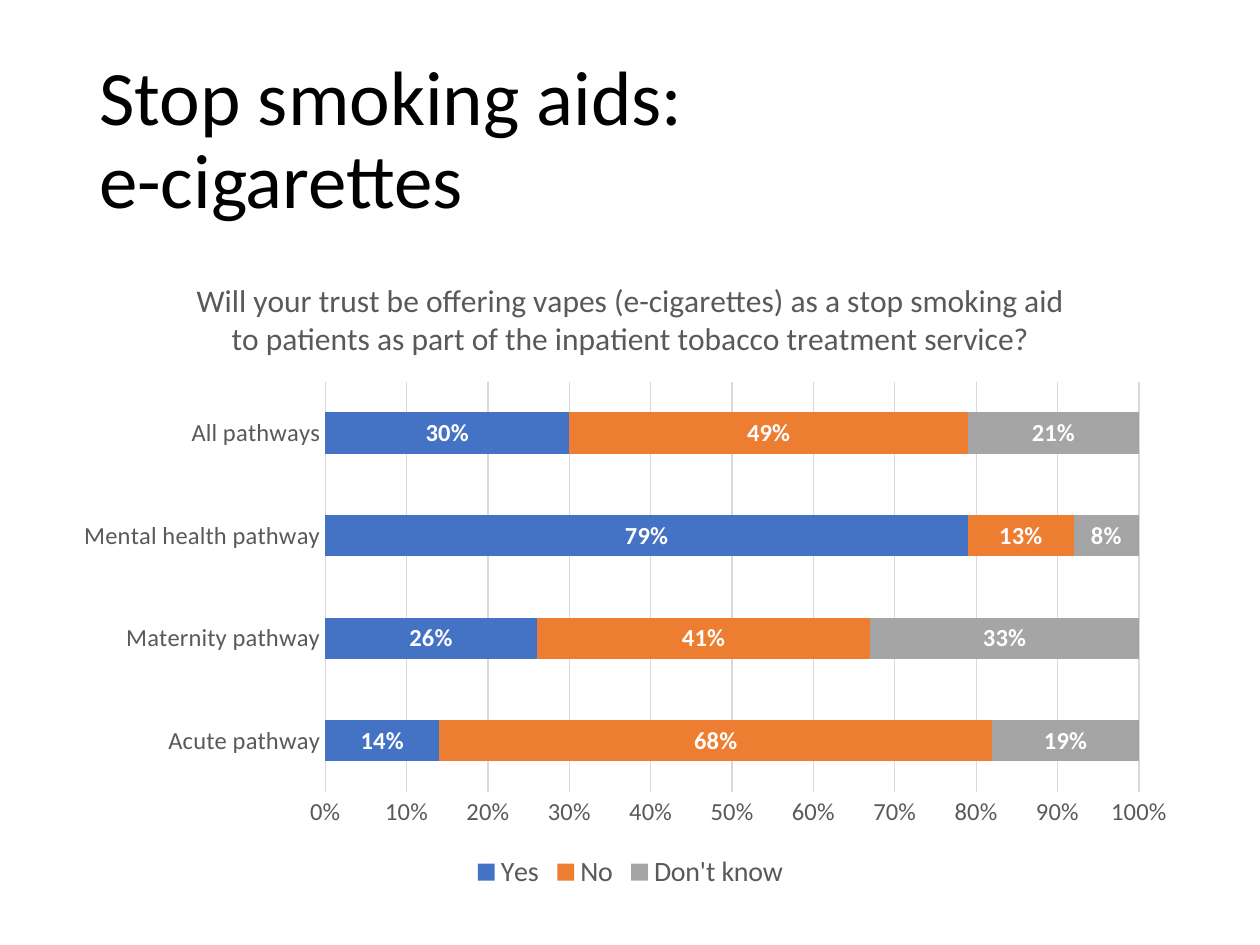
from lxml import etree
from pptx import Presentation
from pptx import util as u
from pptx.chart.data import CategoryChartData
from pptx.dml.color import RGBColor
from pptx.enum import chart as ch, text
from pptx.oxml import ns


def rgb(code):
    return RGBColor.from_string(code)


class Deck:
    face = "Calibri"
    ink, grey, rule, white = "000000", "595959", "D9D9D9", "FFFFFF"

    def __init__(self, wide, high):
        self.prs = Presentation()
        self.prs.slide_width, self.prs.slide_height = u.Cm(wide), u.Cm(high)
        self.slide = self.prs.slides.add_slide(self.prs.slide_layouts[6])

    def style(self, font, size, color, bold=False):
        font.name, font.size, font.bold = self.face, u.Pt(size), bold
        font.color.rgb = rgb(color)

    def title(self, words, box, size):
        frame = self.slide.shapes.add_textbox(*map(u.Cm, box)).text_frame
        frame.word_wrap = True
        frame.vertical_anchor = text.MSO_ANCHOR.MIDDLE
        frame.text = words
        para = frame.paragraphs[0]
        para.line_spacing = 0.9
        self.style(para.runs[0].font, size, self.ink)

    def line(self, form):
        form.line.color.rgb, form.line.width = rgb(self.rule), u.Pt(0.75)

    def axis(self, axis):
        axis.major_tick_mark = axis.minor_tick_mark = ch.XL_TICK_MARK.NONE
        self.style(axis.tick_labels.font, 14, self.grey)

    def place(self, chart, area):
        # Inner plot area as fractions of the chart
        plot = chart.plots[0]._element.getparent()
        for old in plot.findall(ns.qn("c:layout")):
            plot.remove(old)
        layout = etree.Element(ns.qn("c:layout"))
        hand = etree.SubElement(layout, ns.qn("c:manualLayout"))
        marks = [("layoutTarget", "inner"), ("xMode", "edge"), ("yMode", "edge")]
        for tag, val in marks + list(zip("xywh", area)):
            etree.SubElement(hand, ns.qn("c:" + tag)).set("val", str(val))
        plot.insert(0, layout)

    def bars(self, ask, cats, rows, box, area):
        data = CategoryChartData(number_format="0%")
        data.categories = cats
        for name, _, vals in rows:
            data.add_series(name, vals)
        chart = self.slide.shapes.add_chart(
            ch.XL_CHART_TYPE.BAR_STACKED, *map(u.Cm, box), data).chart
        self.style(chart.font, 10, self.ink)

        # Question above the bars
        chart.has_title = True
        chart.chart_title.include_in_layout = False
        head = chart.chart_title.text_frame
        head.text = ask
        self.style(head.paragraphs[0].runs[0].font, 18, self.grey)

        # Axes
        cat, val = chart.category_axis, chart.value_axis
        self.axis(cat)
        self.line(cat.format)
        self.axis(val)
        val.format.line.fill.background()
        val.minimum_scale, val.maximum_scale, val.major_unit = 0, 1, 0.1
        val.tick_labels.number_format = "0%"
        val.tick_labels.number_format_is_linked = False
        val.has_major_gridlines = True
        self.line(val.major_gridlines.format)

        # Bars and their labels
        plot = chart.plots[0]
        plot.gap_width, plot.overlap, plot.vary_by_categories = 150, 100, False
        for bar, (_, color, _) in zip(plot.series, rows):
            bar.format.fill.solid()
            bar.format.fill.fore_color.rgb = rgb(color)
            tags = bar.data_labels
            tags.show_value = True
            tags.position = ch.XL_LABEL_POSITION.CENTER
            tags.number_format, tags.number_format_is_linked = "0%", False
            self.style(tags.font, 14, self.white, True)

        # Legend
        chart.has_legend = True
        chart.legend.position = ch.XL_LEGEND_POSITION.BOTTOM
        chart.legend.include_in_layout = False
        self.style(chart.legend.font, 16, self.grey)
        self.place(chart, area)


def main():
    deck = Deck(25.4, 19.05)
    deck.title("Stop smoking aids: e-cigarettes", (1.75, 1.02, 13.31, 3.68), 44)
    deck.bars(
        "Will your trust be offering vapes (e-cigarettes) as a stop smoking aid "
        "to patients as part of the inpatient tobacco treatment service?",
        ["Acute pathway", "Maternity pathway", "Mental health pathway",
         "All pathways"],
        [("Yes", "4472C4", (0.14, 0.26, 0.79, 0.30)),
         ("No", "ED7D31", (0.68, 0.41, 0.13, 0.49)),
         ("Don't know", "A5A5A5", (0.19, 0.33, 0.08, 0.21))],
        (1.32, 5.11, 22.78, 12.93), (0.23, 0.2, 0.72, 0.64))
    deck.prs.save("out.pptx")


if __name__ == "__main__":
    main()
